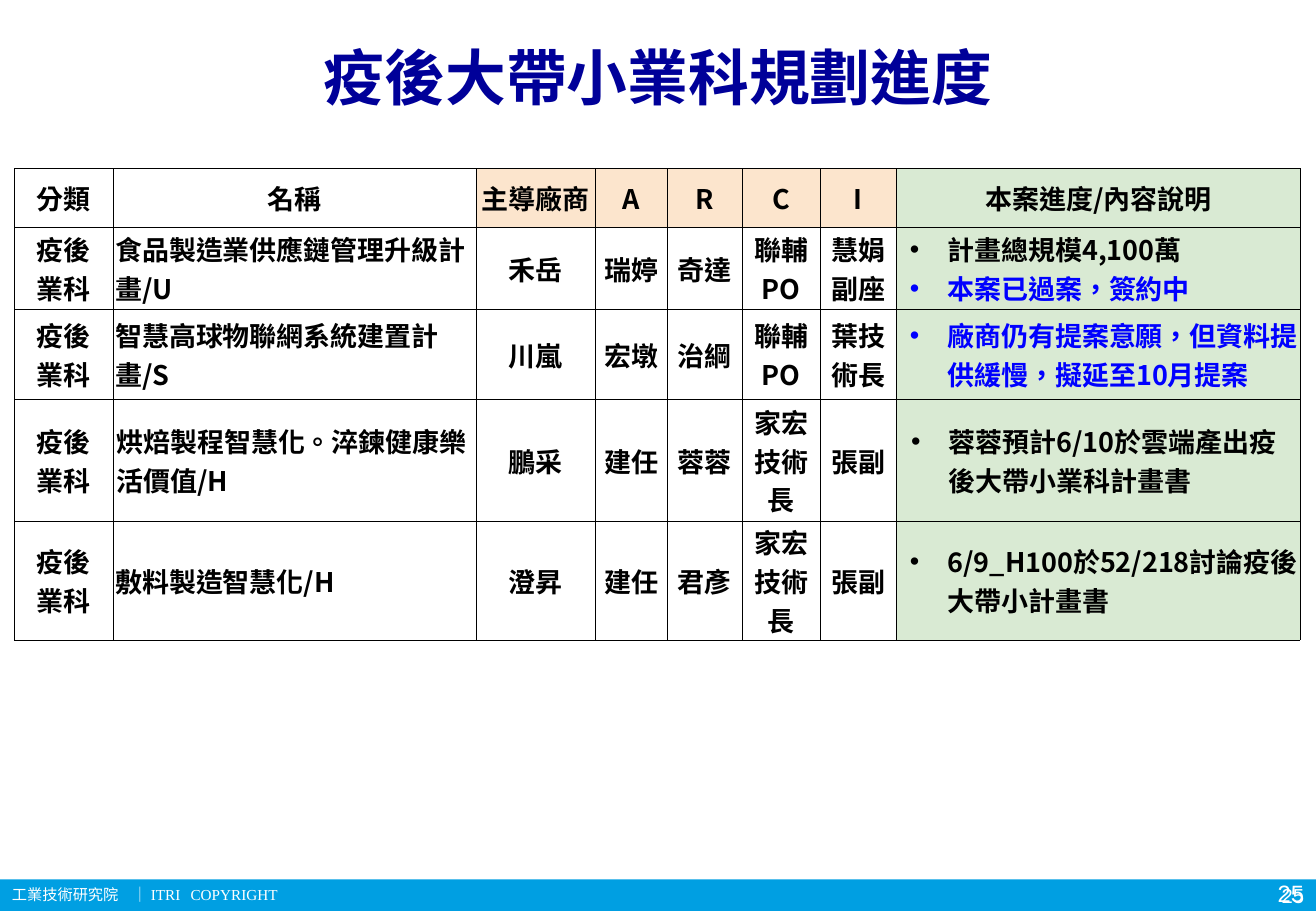
from lxml.etree import SubElement
from pptx import Presentation
from pptx.dml.color import RGBColor
from pptx.enum.shapes import MSO_SHAPE as Preset
from pptx.enum.text import MSO_ANCHOR as Anchor, PP_ALIGN as Align
from pptx.oxml.ns import qn
from pptx.util import Inches, Pt

COLORS = {
    "black": "000000", "white": "FFFFFF", "navy": "000099", "blue": "0000FF",
    "sky": "009FE2", "peach": "FCE5CD", "green": "D9EAD3",
}
CJK_FONT = "Noto Sans CJK SC"


def add_span(para, text, size, color, font=CJK_FONT, bold=False):
    """Add one formatted stretch of text to a paragraph."""
    span = para.add_run()
    span.text = text
    look = {"size": Pt(size), "name": font, "bold": bold}
    for name, value in look.items():
        setattr(span.font, name, value)
    span.font.color.rgb = RGBColor.from_string(COLORS[color])
    props = span.font._element
    props.set("lang", "zh-TW")
    SubElement(props, qn("a:ea"), typeface=CJK_FONT)


def add_text(page, place, align, anchor):
    """Add a wrapping text box and return its first paragraph."""
    box = page.shapes.add_textbox(*map(Inches, place))
    box.text_frame.word_wrap = True
    box.text_frame.vertical_anchor = anchor
    para = box.text_frame.paragraphs[0]
    para.alignment = align
    return para


deck = Presentation()
deck.slide_width, deck.slide_height = Inches(10.83), Inches(7.5)
page = deck.slides.add_slide(deck.slide_layouts[6])

# Footer bar
bar = page.shapes.add_shape(
    Preset.RECTANGLE, Inches(0), Inches(7.24), Inches(10.83), Inches(0.26))
bar.shadow.inherit = False
bar.fill.solid()
bar.fill.fore_color.rgb = RGBColor.from_string(COLORS["sky"])
bar.line.fill.background()

# Footer wording, with tab stops for the gaps
footer = add_text(page, (0, 7.23, 9.68, 0.26), Align.LEFT, Anchor.MIDDLE)
tabs = SubElement(footer._p.get_or_add_pPr(), qn("a:tabLst"))
for stop in (0.99, 1.47):
    SubElement(tabs, qn("a:tab"), pos=str(Inches(stop)), algn="l")
add_span(footer, "工業技術研究院\t│ ITRI\tCOPYRIGHT", 9, "white", "Times New Roman")

# Page numbers
for place, size, anchor in (
    ((10.21, 7.24, 0.62, 0.26), 12, Anchor.MIDDLE),
    ((8.31, 7.19, 2.52, 0.31), 14, Anchor.TOP),
):
    number = add_text(page, place, Align.RIGHT, anchor)
    add_span(number, "25", size, "white", "Arial")

# Title
title = add_text(page, (0.54, 0.21, 9.75, 0.84), Align.CENTER, Anchor.MIDDLE)
add_span(title, "疫後大帶小業科規劃進度", 36, "navy", bold=True)

# Table content: a line break in a cell starts a new paragraph
category = "疫後\n業科"
rows = [
    ["分類", "名稱", "主導廠商", "A", "R", "C", "I", "本案進度/內容說明"],
    [category, "食品製造業供應鏈管理升級計畫/U", "禾岳", "瑞婷", "奇達",
     "聯輔PO", "慧娟副座", "計畫總規模4,100萬\n本案已過案，簽約中"],
    [category, "智慧高球物聯網系統建置計畫/S", "川嵐", "宏墩", "治綱",
     "聯輔PO", "葉技術長", "廠商仍有提案意願，但資料提供緩慢，擬延至10月提案"],
    [category, "烘焙製程智慧化。淬鍊健康樂活價值/H", "鵬采", "建任", "蓉蓉",
     "家宏技術長", "張副", "蓉蓉預計6/10於雲端產出疫後大帶小業科計畫書"],
    [category, "敷料製造智慧化/H", "澄昇", "建任", "君彥",
     "家宏技術長", "張副", "6/9_H100於52/218討論疫後大帶小計畫書"],
]
blue_lines = {"本案已過案，簽約中", rows[2][-1]}
widths = [0.81, 2.99, 0.98, 0.59, 0.62, 0.64, 0.63, 3.32]
heights = [0.48, 0.68, 0.74, 1.0, 0.98]
insets = [(0, 0), (0.02, 0.01), (0.02, 0.01), (0.03, 0.02), (0.02, 0.01)]
NAME, STATUS = 1, 7

# Table grid
table = page.shapes.add_table(
    len(rows), len(widths), Inches(0.12), Inches(1.39),
    Inches(sum(widths)), Inches(sum(heights))).table
table.first_row = table.horz_banding = False
for column, width in zip(table.columns, widths):
    column.width = Inches(width)
for row, height in zip(table.rows, heights):
    row.height = Inches(height)

# Table cells
for r, texts in enumerate(rows):
    for c, text in enumerate(texts):
        cell = table.cell(r, c)
        cell.vertical_anchor = Anchor.MIDDLE
        side, edge = (0, 0) if (r, c) == (3, 0) else insets[r]
        cell.margin_left = Inches(side)
        cell.margin_right = Inches(0 if c == STATUS else side)
        cell.margin_top = cell.margin_bottom = Inches(edge)

        # Borders come before the fill
        for tag in ("a:lnL", "a:lnR", "a:lnT", "a:lnB"):
            border = SubElement(
                cell._tc.get_or_add_tcPr(), qn(tag), w=str(Pt(0.5)))
            solid = SubElement(border, qn("a:solidFill"))
            SubElement(solid, qn("a:srgbClr"), val=COLORS["black"])
        shade = "green" if c == STATUS else "peach" if r == 0 and c > NAME else None
        if shade:
            cell.fill.solid()
            cell.fill.fore_color.rgb = RGBColor.from_string(COLORS[shade])
        else:
            cell.fill.background()

        for i, line in enumerate(text.split("\n")):
            frame = cell.text_frame
            para = frame.add_paragraph() if i else frame.paragraphs[0]
            left = r > 0 and c in (NAME, STATUS)
            para.alignment = Align.LEFT if left else Align.CENTER
            if r > 0 and c == STATUS:
                props = para._p.get_or_add_pPr()
                props.set("marL", str(Inches(0.4)))
                props.set("indent", str(Inches(-0.31)))
                SubElement(props, qn("a:buFont"), typeface="Arial")
                SubElement(props, qn("a:buChar"), char="•")
            color = "blue" if line in blue_lines else "black"
            add_span(para, line, 16, color, bold=True)

deck.save("out.pptx")
